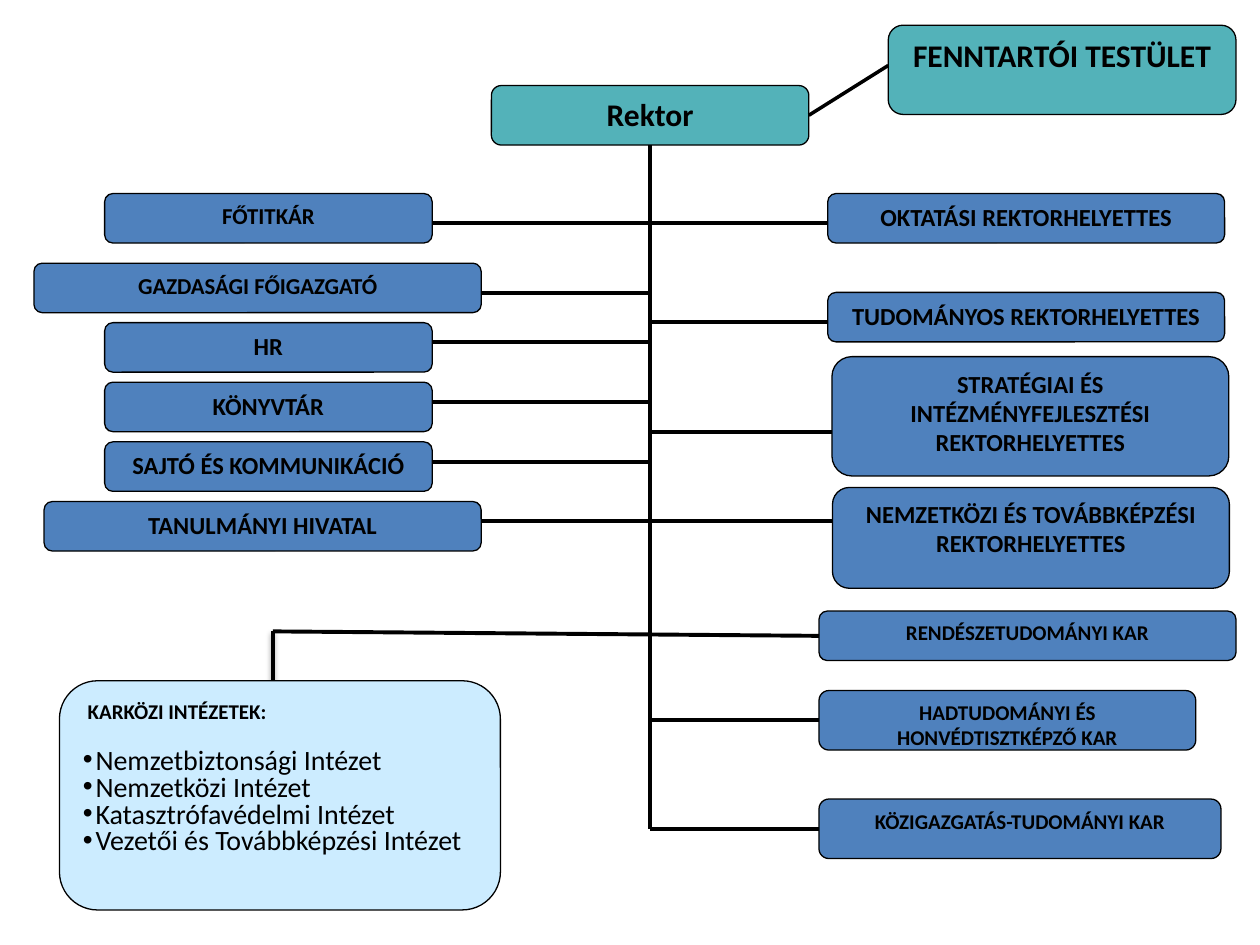
from lxml import etree
from pptx import Presentation
from pptx.dml.color import RGBColor
from pptx.enum import shapes, text
from pptx.oxml import ns
from pptx.util import Pt

COLORS = {"unit": "4F81BD", "leader": "53B2B9", "institutes": "CCECFF", "ink": "000000"}
FONT = "Calibri"
SPINE_X = 371.5
TOP, LEFT, BOTTOM, RIGHT = range(4)

STAFF = [
    ("FŐTITKÁR", 13, 40.4, 0, 187.2, 17),
    ("GAZDASÁGI FŐIGAZGATÓ", 13, 0, 39.8, 255.6, 17),
    ("HR", 14, 40.4, 73.8, 187.2, 11.3),
    ("KÖNYVTÁR", 14, 40.4, 107.8, 187.2, 11.3),
    ("SAJTÓ ÉS KOMMUNIKÁCIÓ", 14, 40.4, 141.9, 187.2, 11.3),
    ("TANULMÁNYI HIVATAL", 14, 5.8, 176, 249.8, 11.3),
]
DEPUTIES = [
    ("OKTATÁSI REKTORHELYETTES", 0, 0, 28.3, 17),
    ("TUDOMÁNYOS REKTORHELYETTES", 0, 56.5, 28.3, 17),
    ("STRATÉGIAI ÉS INTÉZMÉNYFEJLESZTÉSI REKTORHELYETTES", 2.4, 93.2, 68.2, 43.2),
    ("NEMZETKÖZI ÉS TOVÁBBKÉPZÉSI REKTORHELYETTES", 2.7, 168, 57.6, 19.2),
]
FACULTIES = [
    ("RENDÉSZETUDOMÁNYI KAR", 0, 238.3, 28.3),
    ("HADTUDOMÁNYI ÉS HONVÉDTISZTKÉPZŐ KAR", 45.4, 215.3, 34),
    ("KÖZIGAZGATÁS-TUDOMÁNYI KAR", 107.4, 229.7, 34),
]
INSTITUTES = [
    "Nemzetbiztonsági Intézet",
    "Nemzetközi Intézet",
    "Katasztrófavédelmi Intézet",
    "Vezetői és Továbbképzési Intézet",
]


def color(name):
    return RGBColor.from_string(COLORS[name])


def add_run(paragraph, words, size, bold):
    run = paragraph.add_run()
    run.text = words
    run.font.name = FONT
    run.font.size = Pt(size)
    run.font.bold = bold
    run.font.color.rgb = color("ink")


def add_box(slide, left, top, width, height, fill):
    box = slide.shapes.add_shape(
        shapes.MSO_SHAPE.ROUNDED_RECTANGLE, Pt(left), Pt(top), Pt(width), Pt(height))
    box.shadow.inherit = False
    box.fill.solid()
    box.fill.fore_color.rgb = color(fill)
    box.line.color.rgb = color("ink")
    box.line.width = Pt(0.75)
    box.text_frame.word_wrap = True
    box.text_frame.vertical_anchor = text.MSO_ANCHOR.TOP
    return box


def add_unit(slide, left, top, width, height, words, size, fill="unit"):
    unit = add_box(slide, left, top, width, height, fill)
    paragraph = unit.text_frame.paragraphs[0]
    paragraph.alignment = text.PP_ALIGN.CENTER
    add_run(paragraph, words, size, True)
    return unit


def add_line(slide, x1, y1, x2, y2, weight=2.25):
    line = slide.shapes.add_connector(
        shapes.MSO_CONNECTOR.STRAIGHT, Pt(x1), Pt(y1), Pt(x2), Pt(y2))
    line.line.color.rgb = color("ink")
    line.line.width = Pt(weight)
    etree.SubElement(line.element.spPr, ns.qn("a:effectLst"))
    return line


def add_soft_shadow(line):
    effects = line.element.spPr.find(ns.qn("a:effectLst"))
    shadow = etree.SubElement(effects, ns.qn("a:outerShdw"), blurRad=str(Pt(3.1)),
                              dist=str(Pt(1.6)), dir="5400000", rotWithShape="0")
    ink = etree.SubElement(shadow, ns.qn("a:srgbClr"), val=COLORS["ink"])
    etree.SubElement(ink, ns.qn("a:alpha"), val="38000")


def draw_leaders(slide, left, top):
    rector = add_unit(slide, left, top + 34.5, 181.4, 34, "Rektor", 18, "leader")
    add_unit(slide, left + 226.8, top, 198.7, 51, "FENNTARTÓI TESTÜLET", 18, "leader")
    link = add_line(slide, left + 181.4, top + 51.5, left + 226.8, top + 23, 2)
    link.begin_connect(rector, RIGHT)
    return rector


def draw_spine(slide, rector, top, middle, bottom):
    upper = add_line(slide, SPINE_X, top, SPINE_X, middle)
    upper.begin_connect(rector, BOTTOM)
    add_line(slide, SPINE_X, middle, SPINE_X, bottom)


def draw_staff(slide, left, top):
    for words, size, dx, dy, width, branch in STAFF:
        x, y = left + dx, top + dy
        add_unit(slide, x, y, width, 28.3, words, size)
        add_line(slide, x + width, y + branch, SPINE_X, y + branch)


def draw_deputies(slide, left, top):
    for words, dx, dy, height, branch in DEPUTIES:
        x, y = left + dx, top + dy
        add_unit(slide, x, y, 226.8, height, words, 14)
        add_line(slide, SPINE_X, y + branch, x, y + branch)


def draw_faculties(slide, left, top):
    faculties = [add_unit(slide, left, top + dy, width, height, words, 12)
                 for words, dy, width, height in FACULTIES]
    for faculty, (_, dy, _, height) in list(zip(faculties, FACULTIES))[1:]:
        y = top + dy + height / 2
        add_line(slide, SPINE_X, y, left, y).end_connect(faculty, LEFT)
    return faculties[0]


def draw_institutes(slide, left, top, width, height, first_faculty):
    stem_x, stem_y = left + 121.9, top - 28.2
    stem = add_line(slide, stem_x, stem_y, stem_x, top + 17, 2)
    add_soft_shadow(stem)
    feeder = add_line(slide, stem_x, stem_y, 468, stem_y + 2.5)
    feeder.end_connect(first_faculty, LEFT)

    frame = add_box(slide, left, top, width, height, "institutes").text_frame
    heading = frame.paragraphs[0]
    heading.alignment = text.PP_ALIGN.LEFT
    heading._p.get_or_add_pPr().set("marL", str(Pt(2.7)))
    add_run(heading, "KARKÖZI INTÉZETEK:", 12, True)
    for number, institute in enumerate(INSTITUTES):
        item = frame.add_paragraph()
        properties = item._p.get_or_add_pPr()
        properties.set("marL", str(Pt(7.2)))
        properties.set("indent", str(-Pt(7.2)))
        etree.SubElement(properties, ns.qn("a:buFont"), typeface="Arial")
        etree.SubElement(properties, ns.qn("a:buChar"), char="•")
        item.alignment = text.PP_ALIGN.LEFT
        item.line_spacing = 0.8
        item.space_before = Pt(0 if number else 14.6)
        add_run(item, institute, 16, False)


def main():
    deck = Presentation()
    deck.slide_width, deck.slide_height = Pt(720), Pt(540)
    slide = deck.slides.add_slide(deck.slide_layouts[6])
    rector = draw_leaders(slide, 280.8, 14.4)
    draw_spine(slide, rector, 82.9, 332, 473.6)
    draw_staff(slide, 19.4, 110.6)
    draw_deputies(slide, 473, 110.6)
    first_faculty = draw_faculties(slide, 468, 349.2)
    draw_institutes(slide, 34, 389, 252, 131, first_faculty)
    deck.save("out.pptx")


if __name__ == "__main__":
    main()
